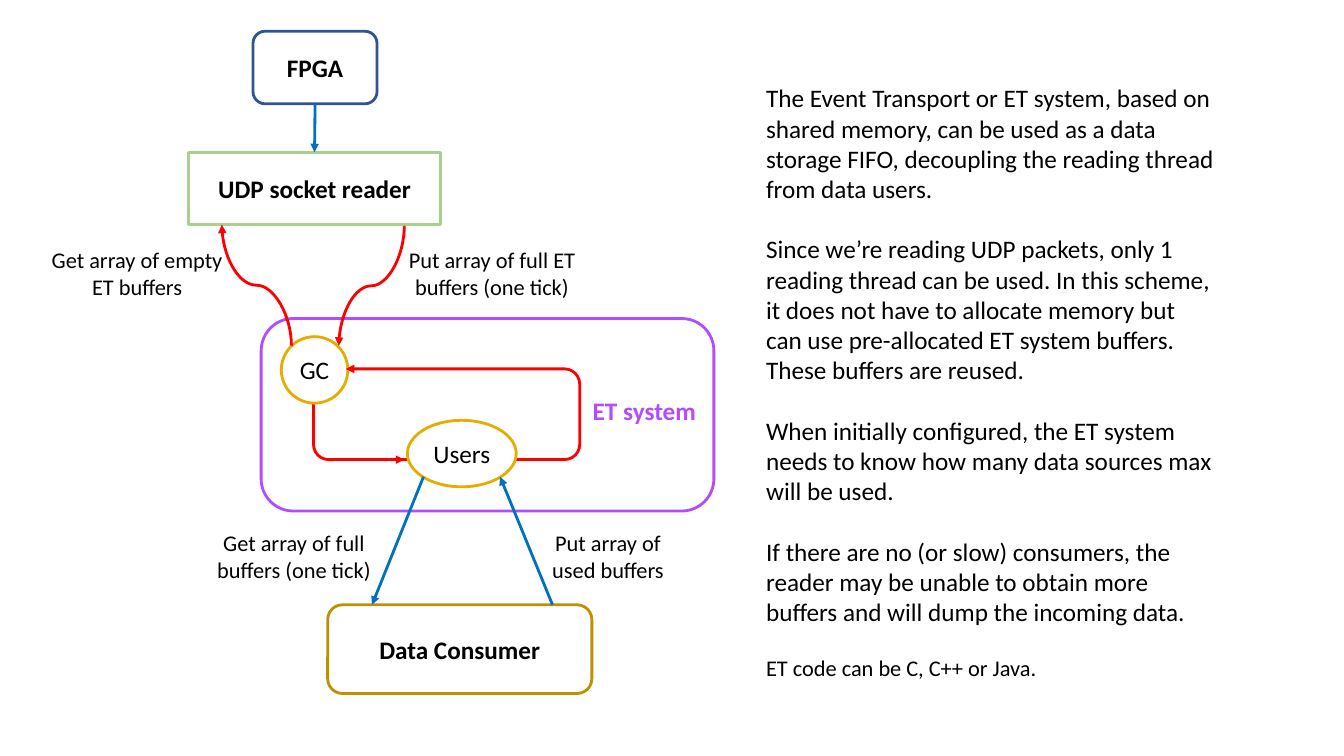
"""Build the slide that explains the Event Transport (ET) data flow."""
from lxml import etree
from pptx import Presentation
from pptx.dml.color import RGBColor
from pptx.enum import shapes, text
from pptx.oxml import ns
from pptx.util import Inches, Pt

COLORS = {
    "black": "000000", "white": "FFFFFF", "navy": "325491", "green": "A9D18E",
    "red": "FF0000", "purple": "B24CFF", "gold": "E6AC00", "ochre": "BF9000",
    "blue": "0070C0",
}
FONT = "Calibri"
KIND = shapes.MSO_SHAPE
LINK = shapes.MSO_CONNECTOR
ALIGN = text.PP_ALIGN

NOTES = [
    ("The Event Transport or ET system, based on shared memory, can be used as a data "
     "storage FIFO, decoupling the reading thread from data users.", 18, 0),
    ("Since we’re reading UDP packets, only 1 reading thread can be used. In this scheme, "
     "it does not have to allocate memory but can use pre-allocated ET system buffers. "
     "These buffers are reused.", 18, 21.6),
    ("When initially configured, the ET system needs to know how many data sources max "
     "will be used.", 18, 21.6),
    ("If there are no (or slow) consumers, the reader may be unable to obtain more "
     "buffers and will dump the incoming data.", 18, 21.6),
    ("ET code can be C, C++ or Java.", 16, 19.5),
]
CAPTIONS = [
    ("Get array of empty ET buffers", 0.3, 2.39, 2.12),
    ("Put array of full ET buffers (one tick)", 3.71, 2.39, 2.34),
    ("Get array of full buffers (one tick)", 2.01, 5.2, 1.81),
    ("Put array of used buffers", 5.19, 5.2, 1.68),
]


def rgb(name):
    """Return the named palette colour."""
    return RGBColor.from_string(COLORS[name])


def write(p, words, size=18, color="black", bold=False, align=ALIGN.LEFT, before=0):
    """Write formatted words into a paragraph."""
    p.alignment = align
    p.space_before = Pt(before)
    r = p.add_run()
    r.text = words
    r.font.name, r.font.size, r.font.bold = FONT, Pt(size), bold
    r.font.color.rgb = rgb(color)


def add_text(s, left, top, width, height):
    """Add a wrapping text box and return its text frame."""
    tf = s.shapes.add_textbox(*map(Inches, (left, top, width, height))).text_frame
    tf.word_wrap = True
    return tf


def add_node(s, kind, left, top, width, height, line, label="", fill=None, bold=True):
    """Add an outlined shape with an optional centred label."""
    sp = s.shapes.add_shape(kind, *map(Inches, (left, top, width, height)))
    sp.shadow.inherit = False
    sp.line.color.rgb = rgb(line)
    sp.line.width = Pt(2)
    if fill:
        sp.fill.solid()
        sp.fill.fore_color.rgb = rgb(fill)
    else:
        sp.fill.background()
    if label:
        tf = sp.text_frame
        tf.word_wrap = False
        tf.vertical_anchor = text.MSO_ANCHOR.MIDDLE
        write(tf.paragraphs[0], label, bold=bold, align=ALIGN.CENTER)
    return sp


def add_arrow(s, start, end, color, kind=LINK.STRAIGHT):
    """Add a connector with a triangle head at its end."""
    c = s.shapes.add_connector(kind, *map(Inches, (*start, *end)))
    c.line.color.rgb = rgb(color)
    c.line.width = Pt(2)
    etree.SubElement(c.line._get_or_add_ln(), ns.qn("a:tailEnd"), type="triangle")
    etree.SubElement(c._element.spPr, ns.qn("a:effectLst"))
    return c


def add_vertical_curve(s, start, end, color):
    """Add an S-shaped arrow that leaves and arrives vertically."""
    (x1, y1), (x2, y2) = start, end
    cx, cy = (x1 + x2) / 2, (y1 + y2) / 2
    turn, sign = (90, 1) if y2 > y1 else (270, -1)
    dx, dy = sign * (y1 - cy), sign * (cx - x1)
    c = add_arrow(s, (cx + dx, cy + dy), (cx - dx, cy - dy), color, LINK.CURVE)
    c._element.spPr.xfrm.set("rot", str(turn * 60000))


def add_diagram(s):
    """Draw the path of buffers from the FPGA to the consumer."""
    fpga = add_node(s, KIND.ROUNDED_RECTANGLE, 2.51, 0.31, 1.23, 0.72, "navy", "FPGA")
    reader = add_node(s, KIND.RECTANGLE, 1.87, 1.51, 2.5, 0.72, "green", "UDP socket reader")
    add_node(s, KIND.ROUNDED_RECTANGLE, 3.11, 3.66, 2.64, 0.9, "red")
    add_node(s, KIND.ROUNDED_RECTANGLE, 2.59, 3.16, 4.49, 1.91, "purple")
    write(add_text(s, 5.78, 3.87, 1.3, 0.4).paragraphs[0], "ET system",
          color="purple", bold=True)
    add_node(s, KIND.OVAL, 2.79, 3.34, 0.66, 0.66, "gold", "GC", "white", False)
    add_node(s, KIND.OVAL, 4.04, 4.17, 1.08, 0.66, "gold", "Users", "white", False)
    add_node(s, KIND.ROUNDED_RECTANGLE, 3.25, 6, 2.62, 0.88, "ochre", "Data Consumer")

    feed = add_arrow(s, (3.12, 1.03), (3.12, 1.51), "blue")
    feed.begin_connect(fpga, 2)
    feed.end_connect(reader, 0)
    add_arrow(s, (4.13, 3.66), (3.43, 3.66), "red")
    add_arrow(s, (3.65, 4.56), (4.01, 4.56), "red")
    add_vertical_curve(s, (2.89, 3.43), (2.2, 2.23), "red")
    add_vertical_curve(s, (4.01, 2.24), (3.36, 3.43), "red")
    add_arrow(s, (4.2, 4.73), (3.69, 6), "blue")
    add_arrow(s, (5.48, 6), (4.96, 4.73), "blue")

    for words, left, top, width in CAPTIONS:
        tf = add_text(s, left, top, width, 0.64)
        write(tf.paragraphs[0], words, size=16, align=ALIGN.CENTER)


def add_notes(s):
    """Add the explanation beside the diagram."""
    tf = add_text(s, 7.5, 0.77, 4.66, 6.09)
    for i, (words, size, before) in enumerate(NOTES):
        p = tf.add_paragraph() if i else tf.paragraphs[0]
        write(p, words, size=size, before=before)


def main():
    """Create and save the presentation."""
    prs = Presentation()
    prs.slide_width, prs.slide_height = Inches(13.33), Inches(7.5)
    s = prs.slides.add_slide(prs.slide_layouts[6])
    add_diagram(s)
    add_notes(s)
    prs.save("out.pptx")


if __name__ == "__main__":
    main()
